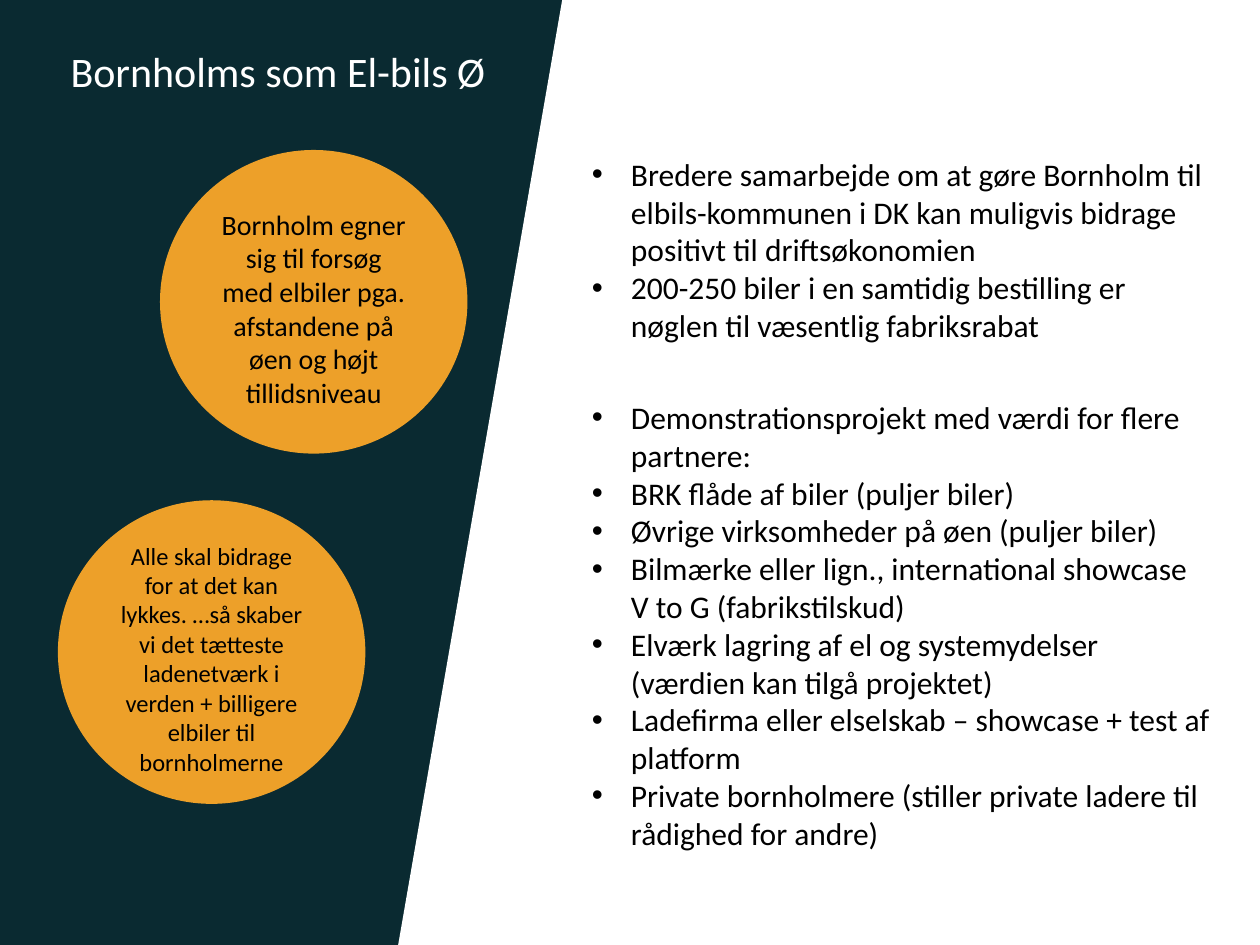
import pptx
import pptx.dml.color
import pptx.enum.shapes
import pptx.enum.text
import pptx.oxml
import pptx.oxml.ns
import pptx.util
from pptx.util import Inches

DARK_TEAL = pptx.dml.color.RGBColor(0x0A, 0x2A, 0x31)
ORANGE = pptx.dml.color.RGBColor(0xED, 0xA0, 0x29)
WHITE = pptx.dml.color.RGBColor(0xFF, 0xFF, 0xFF)
BLACK = pptx.dml.color.RGBColor(0x00, 0x00, 0x00)
SHAPES = pptx.enum.shapes.MSO_SHAPE
ALIGN = pptx.enum.text.PP_ALIGN
ANCHOR = pptx.enum.text.MSO_ANCHOR


def add_filled_shape(kind, left, top, width, height, color):
    shape = slide.shapes.add_shape(
        kind, Inches(left), Inches(top), Inches(width), Inches(height))
    shape.shadow.inherit = False
    shape.fill.solid()
    shape.fill.fore_color.rgb = color
    shape.line.fill.background()
    return shape


def write_paragraph(paragraph, text, size, color, alignment):
    paragraph.text = text
    paragraph.alignment = alignment
    formats = {"name": "Calibri", "size": pptx.util.Pt(size), "bold": False}
    for name, value in formats.items():
        setattr(paragraph.font, name, value)
    paragraph.font.color.rgb = color


presentation = pptx.Presentation()
presentation.slide_width = Inches(10)
presentation.slide_height = Inches(7.5)
slide = presentation.slides.add_slide(presentation.slide_layouts[5])

# Dark panel with a slanted right edge
add_filled_shape(SHAPES.RECTANGLE, 0, 0, 8.73, 7.5, DARK_TEAL)
slant = add_filled_shape(SHAPES.PARALLELOGRAM, 3.16, 0, 6.61, 7.5, WHITE)
slant.adjustments[0] = 0.197
add_filled_shape(SHAPES.RECTANGLE, 6.05, 0, 3.95, 7.5, WHITE)

# Title, brought in front of the panel
title = slide.shapes.title
slide.shapes.element.append(title.element)
title_position = {"left": 0.46, "top": 0.31, "width": 3.52, "height": 0.5}
for name, value in title_position.items():
    setattr(title, name, Inches(value))
title_format = {
    "word_wrap": False,
    "auto_size": pptx.enum.text.MSO_AUTO_SIZE.NONE,
    "vertical_anchor": ANCHOR.TOP,
}
for name, value in title_format.items():
    setattr(title.text_frame, name, value)
write_paragraph(title.text_frame.paragraphs[0], "Bornholms som El-bils Ø",
                24, WHITE, ALIGN.LEFT)

# Orange circles
circles = [
    (1.27, 1.19, 16, "Bornholm egner sig til forsøg med elbiler pga. "
     "afstandene på øen og højt tillidsniveau"),
    (0.46, 3.97, 14, "Alle skal bidrage for at det kan lykkes. …så skaber vi "
     "det tætteste ladenetværk i verden + billigere elbiler til bornholmerne"),
]
for left, top, size, text in circles:
    circle = add_filled_shape(SHAPES.OVAL, left, top, 2.44, 2.41, ORANGE)
    frame_format = {
        "word_wrap": True,
        "vertical_anchor": ANCHOR.MIDDLE,
        "margin_top": Inches(0.1),
        "margin_bottom": 0,
    }
    for name, value in frame_format.items():
        setattr(circle.text_frame, name, value)
    write_paragraph(circle.text_frame.paragraphs[0], text, size, BLACK, ALIGN.CENTER)

# Bullet lists
bullet_lists = [
    (1.18, 1.92, [
        "Bredere samarbejde om at gøre Bornholm til elbils-kommunen i DK "
        "kan muligvis bidrage positivt til driftsøkonomien",
        "200-250 biler i en samtidig bestilling er nøglen til væsentlig fabriksrabat",
    ]),
    (3.11, 3.74, [
        "Demonstrationsprojekt med værdi for flere partnere:",
        "BRK flåde af biler (puljer biler)",
        "Øvrige virksomheder på øen (puljer biler)",
        "Bilmærke eller lign., international showcase\vV to G (fabrikstilskud)",
        "Elværk lagring af el og systemydelser (værdien kan tilgå projektet)",
        "Ladefirma eller elselskab – showcase + test af platform",
        "Private bornholmere (stiller private ladere til rådighed for andre)",
    ]),
]
for top, height, items in bullet_lists:
    box = slide.shapes.add_textbox(
        Inches(4.6), Inches(top), Inches(5.13), Inches(height))
    frame = box.text_frame
    frame.word_wrap = True
    for index, item in enumerate(items):
        paragraph = frame.add_paragraph() if index else frame.paragraphs[0]
        properties = paragraph._p.get_or_add_pPr()
        properties.set("marL", str(Inches(0.31)))
        properties.set("indent", str(-Inches(0.31)))
        properties.append(pptx.oxml.parse_xml(
            f'<a:buFont {pptx.oxml.ns.nsdecls("a")} typeface="Arial"/>'))
        properties.append(pptx.oxml.parse_xml(
            f'<a:buChar {pptx.oxml.ns.nsdecls("a")} char="•"/>'))
        write_paragraph(paragraph, item, 18, BLACK, ALIGN.LEFT)

presentation.save("out.pptx")
